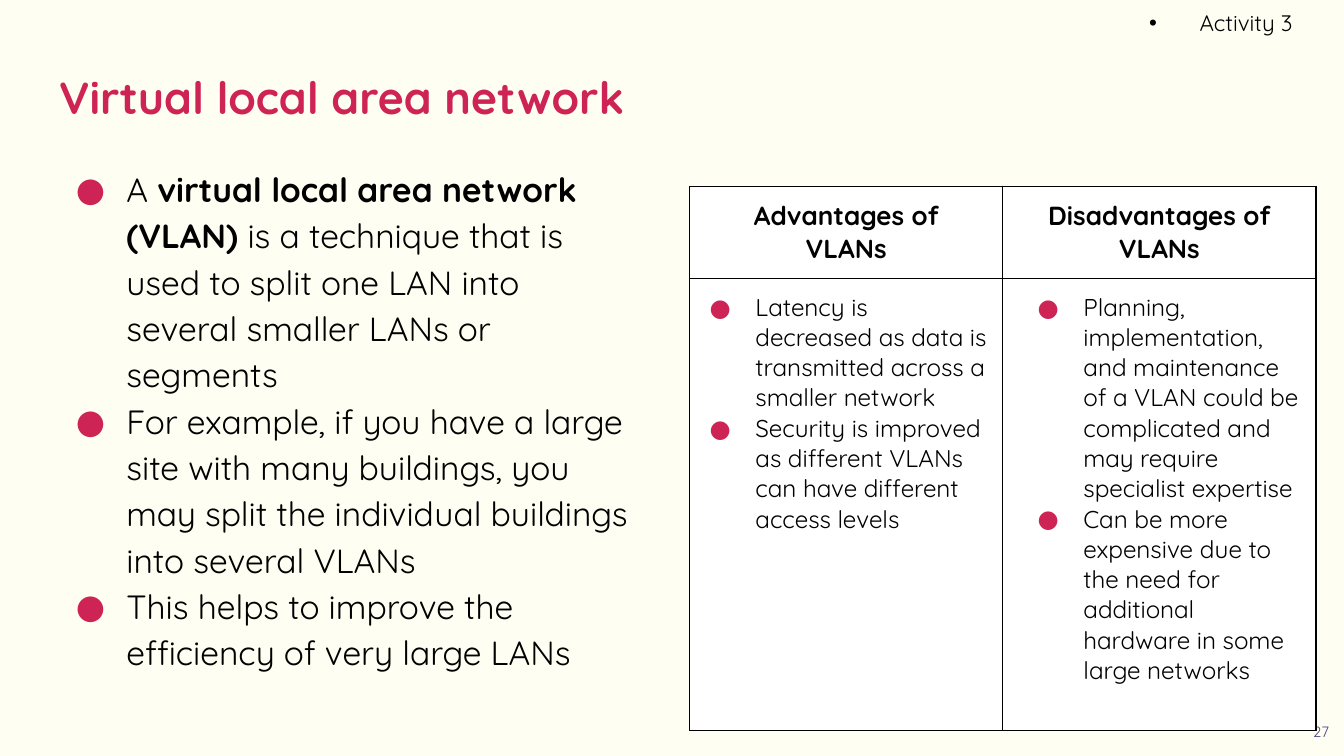
from lxml import etree
from pptx import Presentation
from pptx.dml.color import RGBColor
from pptx.enum.text import MSO_ANCHOR, MSO_AUTO_SIZE, PP_ALIGN
from pptx.oxml.ns import qn
from pptx.util import Pt

CREAM = RGBColor(0xFF, 0xFE, 0xF2)
WHITE = RGBColor(0xFF, 0xFF, 0xFF)
BLACK = RGBColor(0, 0, 0)
CRIMSON = RGBColor(0xCD, 0x23, 0x55)
INDIGO = RGBColor(0x49, 0x49, 0x85)
LEFT, CENTER, RIGHT = PP_ALIGN.LEFT, PP_ALIGN.CENTER, PP_ALIGN.RIGHT
TOP, MIDDLE = MSO_ANCHOR.TOP, MSO_ANCHOR.MIDDLE
NO_AUTOFIT = MSO_AUTO_SIZE.NONE
INSET = Pt(7.2)


def fill_paragraphs(frame, texts, size, color=BLACK, bold=False, align=LEFT,
                    indent=None, hanging=0, spacing=1.0):
    """Write one paragraph per text; an indent gives it a bullet.

    A text may be a list of (words, bold) spans.
    """
    for index, text in enumerate(texts):
        para = frame.paragraphs[0] if index == 0 else frame.add_paragraph()
        para.alignment = align
        para.line_spacing = spacing
        para.space_before = Pt(0)
        if indent:
            props = para._p.get_or_add_pPr()
            props.set("marL", str(Pt(indent)))
            props.set("indent", str(-Pt(hanging)))
            bullet_color = etree.SubElement(props, qn("a:buClr"))
            etree.SubElement(bullet_color, qn("a:srgbClr"), val=str(CRIMSON))
            etree.SubElement(props, qn("a:buFont"), typeface="Quicksand")
            etree.SubElement(props, qn("a:buChar"), char="●")
        para.font.name = "Quicksand"
        para.font.size = Pt(size)
        para.font.color.rgb = color
        if isinstance(text, str):
            para.font.bold = bold
            para.add_run().text = text
        else:
            for words, span_bold in text:
                span = para.add_run()
                span.text = words
                span.font.bold = span_bold


def place(box, left, top, width, height, anchor=TOP, right_inset=INSET):
    box.left, box.top = Pt(left), Pt(top)
    box.width, box.height = Pt(width), Pt(height)
    frame = box.text_frame
    frame.auto_size = NO_AUTOFIT
    frame.word_wrap = True
    frame.vertical_anchor = anchor
    frame.margin_left = frame.margin_top = frame.margin_bottom = INSET
    frame.margin_right = right_inset
    return frame


deck = Presentation()
deck.slide_width, deck.slide_height = Pt(720), Pt(405)
page = deck.slides.add_slide(deck.slide_layouts[3])
page.background.fill.solid()
page.background.fill.fore_color.rgb = CREAM
title, body, activity = page.placeholders

# Title, explanation and activity label
frame = place(title, 24.5, 24.5, 671, 55, MIDDLE)
fill_paragraphs(frame, ["Virtual local area network"], 24, CRIMSON, bold=True)

explanation = [
    [("A ", False), ("virtual local area network (VLAN) ", True),
     ("is a technique that is used to split one LAN into several smaller "
      "LANs or segments", False)],
    "For example, if you have a large site with many buildings, you may split "
    "the individual buildings into several VLANs",
    "This helps to improve the efficiency of very large LANs",
]
frame = place(body, 24.5, 80, 322.5, 288)
fill_paragraphs(frame, explanation, 18, indent=36, hanging=27, spacing=1.15)

frame = place(activity, 538.5, 0, 154, 24.5, MIDDLE, right_inset=0)
fill_paragraphs(frame, ["Activity 3"], 12, align=RIGHT)

# Page number
number = page.shapes.add_textbox(0, 0, 0, 0)
frame = place(number, 695.5, 380, 24.5, 24.5)
frame.word_wrap = False
fill_paragraphs(frame, ["27"], 8, INDIGO, align=CENTER)

# Advantages and disadvantages: heading, points, bullet indent
columns = [
    (["Advantages of", "VLANs"],
     ["Latency is decreased as data is transmitted across a smaller network",
      "Security is improved as different VLANs can have different access levels"],
     28),
    (["Disadvantages of VLANs"],
     ["Planning, implementation, and maintenance of a VLAN could be complicated "
      "and may require specialist expertise",
      "Can be more expensive due to the need for additional hardware in some "
      "large networks"],
     36),
]
table = page.shapes.add_table(2, 2, Pt(369.5), Pt(99.75), Pt(335.5), Pt(291)).table
table.first_row = table.horz_banding = False
table.rows[0].height, table.rows[1].height = Pt(49), Pt(242)
for column, (heading, points, indent) in enumerate(columns):
    fill_paragraphs(table.cell(0, column).text_frame, heading, 14,
                    bold=True, align=CENTER)
    fill_paragraphs(table.cell(1, column).text_frame, points, 13,
                    indent=indent, hanging=24.5)

for cell in table.iter_cells():
    cell.margin_left = cell.margin_right = INSET
    cell.margin_top = cell.margin_bottom = INSET
    cell_props = cell._tc.get_or_add_tcPr()
    for side in ("lnL", "lnR", "lnT", "lnB"):
        border = etree.SubElement(cell_props, qn(f"a:{side}"), w=str(Pt(0.75)))
        line_fill = etree.SubElement(border, qn("a:solidFill"))
        etree.SubElement(line_fill, qn("a:srgbClr"), val=str(BLACK))
    cell.fill.solid()
    cell.fill.fore_color.rgb = WHITE

deck.save("out.pptx")
